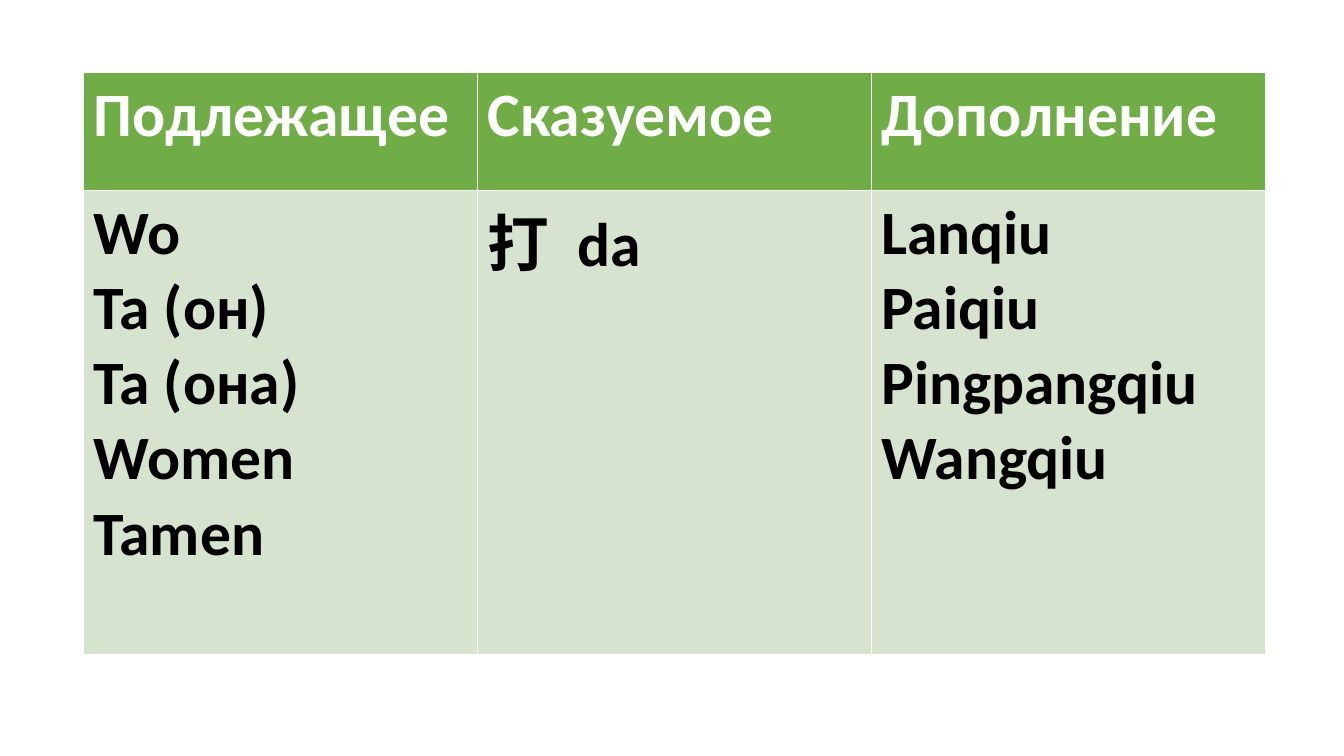
import pptx
import pptx.util
import pptx.dml.color

Pt = pptx.util.Pt

HEADER_GREEN = pptx.dml.color.RGBColor(0x70, 0xAD, 0x47)
PALE_GREEN = pptx.dml.color.RGBColor(0xD5, 0xE3, 0xCF)
WHITE = pptx.dml.color.RGBColor(0xFF, 0xFF, 0xFF)
BLACK = pptx.dml.color.RGBColor(0x00, 0x00, 0x00)

COLUMN_WIDTH = 281.3
HEADER_HEIGHT = 84.2
WORDS_HEIGHT = 331.9
WIDE_SPACE = "1000"

SENTENCE_PARTS = [
    ("Подлежащее", [["Wo"], ["Ta (он)"], ["Ta (она)"], ["Women"], ["Tamen"]]),
    ("Сказуемое", [["打", " ", "da"]]),
    ("Дополнение", [["Lanqiu"], ["Paiqiu"], ["Pingpangqiu"], ["Wangqiu"]]),
]


def add_word(line, text, color):
    """Add one bold run, widening a run that is only a space."""
    word = line.add_run()
    word.text = text
    word.font.name = "Calibri"
    word.font.size = Pt(44)
    word.font.bold = True
    word.font.color.rgb = color
    if text == " ":
        word.font._element.set("spc", WIDE_SPACE)


def fill_cell(cell, lines, background, color):
    """Fill a cell with lines, each a list of run texts."""
    cell.fill.solid()
    cell.fill.fore_color.rgb = background
    frame = cell.text_frame
    for index, words in enumerate(lines):
        line = frame.add_paragraph() if index else frame.paragraphs[0]
        for text in words:
            add_word(line, text, color)


def add_sentence_table(slide):
    """Add the table of sentence parts, one column for each part."""
    count = len(SENTENCE_PARTS)
    table = slide.shapes.add_table(
        2, count, Pt(59.8), Pt(51.8),
        Pt(COLUMN_WIDTH * count), Pt(HEADER_HEIGHT + WORDS_HEIGHT),
    ).table
    table.rows[0].height = Pt(HEADER_HEIGHT)
    table.rows[1].height = Pt(WORDS_HEIGHT)
    for column, (heading, lines) in enumerate(SENTENCE_PARTS):
        table.columns[column].width = Pt(COLUMN_WIDTH)
        fill_cell(table.cell(0, column), [[heading]], HEADER_GREEN, WHITE)
        fill_cell(table.cell(1, column), lines, PALE_GREEN, BLACK)


def main():
    """Build the slide and save it."""
    presentation = pptx.Presentation()
    presentation.slide_width = Pt(960)
    presentation.slide_height = Pt(540)
    slide = presentation.slides.add_slide(presentation.slide_layouts[6])
    add_sentence_table(slide)
    presentation.save("out.pptx")


if __name__ == "__main__":
    main()
